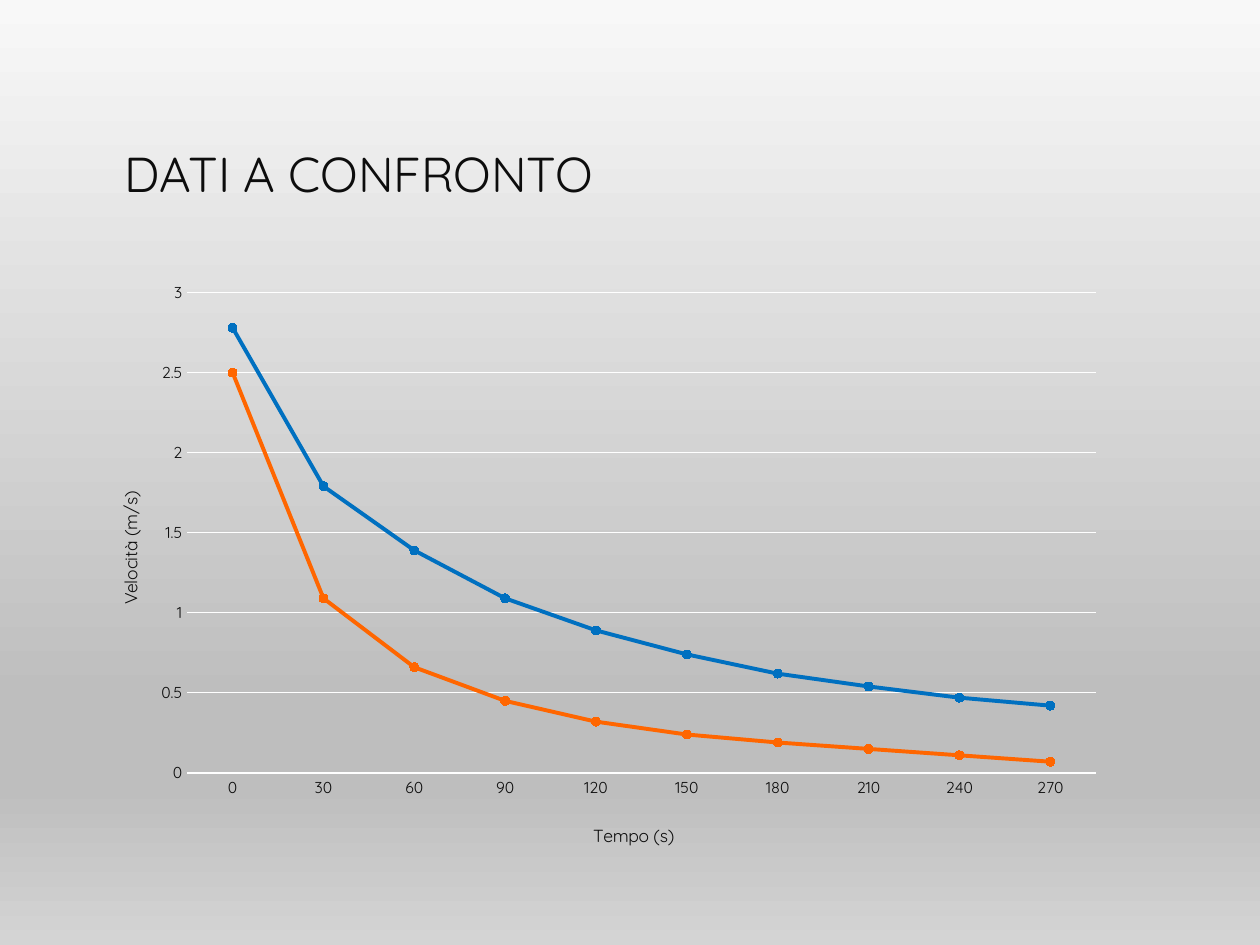
from lxml.etree import SubElement
from pptx import Presentation
from pptx.chart.data import CategoryChartData
from pptx.dml.color import RGBColor
from pptx.enum.chart import XL_CHART_TYPE, XL_MARKER_STYLE, XL_TICK_MARK
from pptx.enum.text import MSO_ANCHOR
from pptx.oxml import parse_xml
from pptx.oxml.ns import nsdecls, qn
from pptx.util import Pt

FONT, INK, WHITE = "Quicksand", "0D0D0D", "FFFFFF"
TITLE = "DATI A CONFRONTO"
BACKGROUND = [(0, "F8F8F8"), (74, "BEBEBE"), (83, "BEBEBE"), (100, "D4D4D4")]
TIMES = [str(t) for t in range(0, 300, 30)]
SERIES = [
    ("Series 1", "0070C0", [2.78, 1.79, 1.39, 1.09, 0.89, 0.74, 0.62, 0.54, 0.47, 0.42]),
    ("Series 2", "FF6600", [2.5, 1.09, 0.66, 0.45, 0.32, 0.24, 0.19, 0.15, 0.11, 0.07]),
]
# Positions inside the chart, as fractions of its size
PLOT = {"x": 0.1, "y": 0.03, "w": 0.88, "h": 0.81}
TIME_TITLE = ("Tempo (s)", {"x": 0.49, "y": 0.92})
SPEED_TITLE = ("Velocità (m/s)", {"x": 0.03, "y": 0.36})


def rgb(color):
    return RGBColor.from_string(color)


def set_font(font, size, color=INK):
    font.name, font.size, font.bold = FONT, Pt(size), False
    font.color.rgb = rgb(color)


def set_line(line, color, width):
    line.color.rgb = rgb(color)
    line.width = Pt(width)


def place(element, index, box, inner=False):
    """Give a chart part a manual layout, as child number index."""
    for old in element.findall(qn("c:layout")):
        element.remove(old)
    layout = parse_xml(f"<c:layout {nsdecls('c')}><c:manualLayout/></c:layout>")
    manual = layout[0]
    if inner:
        SubElement(manual, qn("c:layoutTarget"), val="inner")
    for key in box:
        if key in "xy":
            SubElement(manual, qn(f"c:{key}Mode"), val="edge")
    for key, value in box.items():
        SubElement(manual, qn(f"c:{key}"), val=str(value))
    element.insert(index, layout)


def style_axis(axis, title, box):
    set_font(axis.tick_labels.font, 9)
    axis.major_tick_mark = axis.minor_tick_mark = XL_TICK_MARK.NONE
    p = axis.axis_title.text_frame.paragraphs[0]
    p.text = title
    set_font(p.font, 10)
    place(axis.axis_title.element, 1, box)


prs = Presentation()
prs.slide_width, prs.slide_height = Pt(720), Pt(540)
s = prs.slides.add_slide(prs.slide_layouts[6])

fill = s.background.fill
fill.gradient()
fill.gradient_angle = 270
stops = s.element.find(".//" + qn("a:gsLst"))
for stop in list(stops):
    stops.remove(stop)
for percent, color in BACKGROUND:
    stop = SubElement(stops, qn("a:gs"), pos=str(percent * 1000))
    SubElement(stop, qn("a:srgbClr"), val=color)

tf = s.shapes.add_textbox(Pt(64), Pt(47), Pt(591), Pt(104)).text_frame
tf.word_wrap = True
tf.vertical_anchor = MSO_ANCHOR.MIDDLE
p = tf.paragraphs[0]
p.text = TITLE
set_font(p.font, 28)

data = CategoryChartData()
data.categories = TIMES
for name, color, values in SERIES:
    data.add_series(name, values)
chart = s.shapes.add_chart(
    XL_CHART_TYPE.LINE_MARKERS, Pt(48), Pt(157), Pt(590), Pt(339), data
).chart
chart.has_title = chart.has_legend = False
set_font(chart.font, 10, WHITE)
place(chart.element.find(".//" + qn("c:plotArea")), 0, PLOT, inner=True)

plot = chart.plots[0]
plot.vary_by_categories = False
for series, (name, color, values) in zip(plot.series, SERIES):
    series.smooth = False
    set_line(series.format.line, color, 2.25)
    marker = series.marker
    marker.style, marker.size = XL_MARKER_STYLE.CIRCLE, 5
    marker.format.fill.solid()
    marker.format.fill.fore_color.rgb = rgb(color)
    set_line(marker.format.line, color, 0.75)

times, speeds = chart.category_axis, chart.value_axis
style_axis(times, *TIME_TITLE)
style_axis(speeds, *SPEED_TITLE)
set_line(times.format.line, WHITE, 0.75)
speeds.format.line.fill.background()
speeds.minimum_scale, speeds.maximum_scale, speeds.major_unit = 0, 3, 0.5
speeds.tick_labels.number_format = "General"
speeds.tick_labels.number_format_is_linked = False
speeds.has_major_gridlines = True
set_line(speeds.major_gridlines.format.line, WHITE, 0.75)

prs.save("out.pptx")
